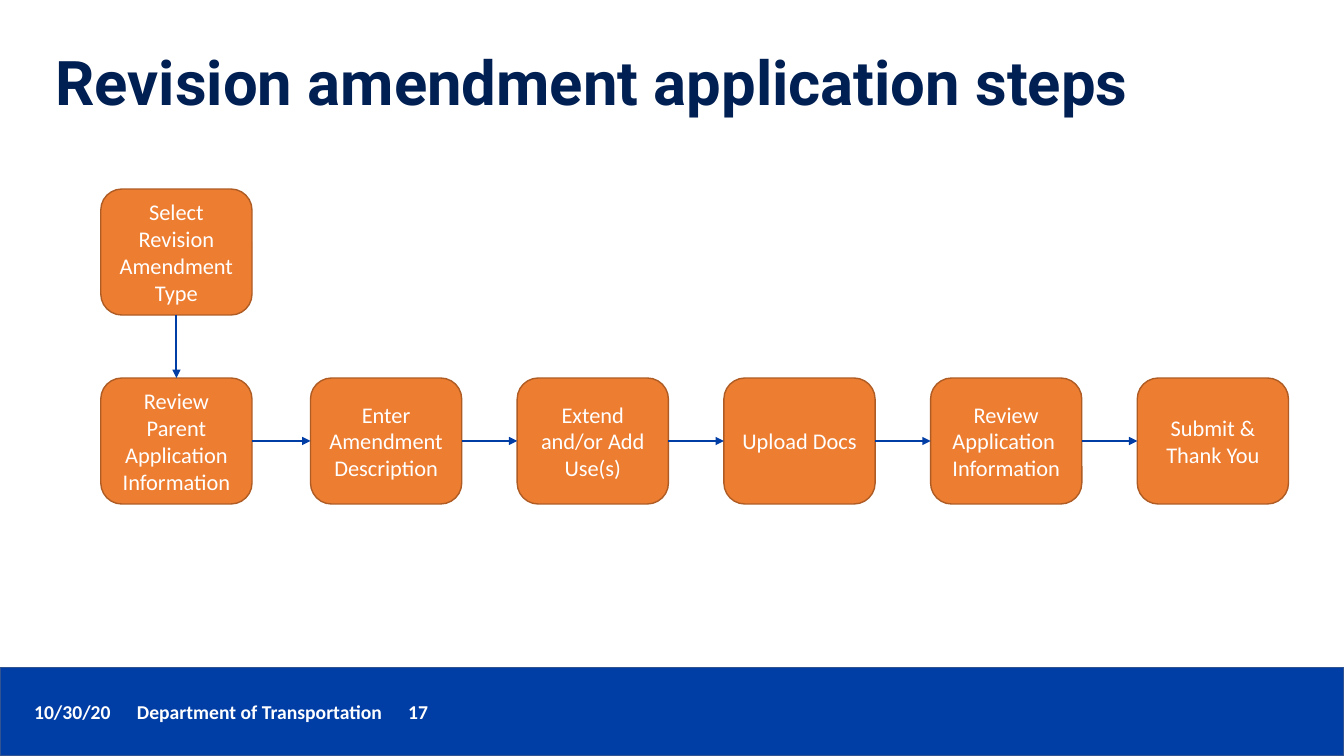
from dataclasses import dataclass

from lxml.etree import SubElement
from pptx import Presentation
from pptx.dml.color import RGBColor
from pptx.enum.shapes import MSO_CONNECTOR, MSO_SHAPE
from pptx.enum.text import MSO_ANCHOR, MSO_AUTO_SIZE, PP_ALIGN
from pptx.oxml.ns import qn
from pptx.util import Inches, Pt

W, H = 13.33, 7.5
ROW_H = H / 4
STEP_W, STEP_H = 1.5, H / 6
FIRST_LEFT, NEXT_LEFT, COL_W = 1, 3.08, 2.05
BAR_TOP = 6.62
TOP, LEFT, BOTTOM, RIGHT = range(4)

TITLE_FONT = {"name": "Roboto", "size": Pt(44), "bold": True}
STEP_FONT = {"name": "Calibri", "size": Pt(16), "bold": False}
FOOTER_FONT = {"name": "Calibri", "size": Pt(14), "bold": True}


@dataclass
class Step:
    text: str
    col: int
    row: int = 1

    @property
    def left(self) -> float:
        return NEXT_LEFT + COL_W * (self.col - 1) if self.col else FIRST_LEFT

    @property
    def top(self) -> float:
        return ROW_H * (self.row + 1)


STEPS = [
    Step("Select Revision Amendment Type", 0, 0),
    Step("Review Parent Application Information", 0),
    Step("Enter Amendment Description", 1),
    Step("Extend and/or Add Use(s)", 2),
    Step("Upload Docs", 3),
    Step("Review Application \nInformation", 4),
    Step("Submit & Thank You", 5),
]


def rgb(value: str) -> RGBColor:
    return RGBColor.from_string(value)


def box(*lengths: float) -> list:
    return [Inches(v) for v in lengths]


def write(tf, text: str, fmt: dict, color: str, align: PP_ALIGN) -> None:
    tf.text = text
    tf.word_wrap = True
    for p in tf.paragraphs:
        p.alignment = align
        for r in p.runs:
            for key, value in fmt.items():
                setattr(r.font, key, value)
            r.font.color.rgb = rgb(color)


def add_block(s, kind: MSO_SHAPE, place: list, fill: str, line: str):
    sp = s.shapes.add_shape(kind, *place)
    sp.shadow.inherit = False
    sp.fill.solid()
    sp.fill.fore_color.rgb = rgb(fill)
    sp.line.color.rgb = rgb(line)
    sp.line.width = Pt(1)
    return sp


def add_step(s, step: Step):
    place = box(step.left, step.top, STEP_W, STEP_H)
    sp = add_block(s, MSO_SHAPE.ROUNDED_RECTANGLE, place, "ED7D31", "AF5C24")
    sp.text_frame.vertical_anchor = MSO_ANCHOR.MIDDLE
    write(sp.text_frame, step.text, STEP_FONT, "FFFFFF", PP_ALIGN.CENTER)
    return sp


def add_arrow(s, start, end, down: bool) -> None:
    cx = s.shapes.add_connector(MSO_CONNECTOR.STRAIGHT, 0, 0, 0, 0)
    cx.begin_connect(start, BOTTOM if down else RIGHT)
    cx.end_connect(end, TOP if down else LEFT)
    cx.line.color.rgb = rgb("003DA5")
    cx.line.width = Pt(1.5)
    SubElement(cx.line._get_or_add_ln(), qn("a:tailEnd"), type="triangle")
    SubElement(cx._element.spPr, qn("a:effectLst"))


def add_footer(s) -> None:
    add_block(s, MSO_SHAPE.RECTANGLE, box(0, BAR_TOP, W, H - BAR_TOP), "003DA5", "31538F")
    tf = s.shapes.add_textbox(*box(0.24, 6.89, 10.06, 0.34)).text_frame
    write(tf, "10/30/20\tDepartment of Transportation\t17", FOOTER_FONT, "FFFFFF", PP_ALIGN.LEFT)
    tabs = SubElement(tf.paragraphs[0]._p.get_or_add_pPr(), qn("a:tabLst"))
    for pos in (1.02, 3.71):
        SubElement(tabs, qn("a:tab"), pos=str(Inches(pos)), algn="l")


def add_title(s) -> None:
    sp = s.shapes.title
    sp.left, sp.top, sp.width, sp.height = box(0.45, 0.12, 11.76, 1.45)
    tf = sp.text_frame
    tf.auto_size = MSO_AUTO_SIZE.NONE
    tf.vertical_anchor = MSO_ANCHOR.MIDDLE
    write(tf, "Revision amendment application steps", TITLE_FONT, "001F52", PP_ALIGN.LEFT)
    tf.paragraphs[0].line_spacing = 0.9


def main() -> None:
    prs = Presentation()
    prs.slide_width, prs.slide_height = box(W, H)
    s = prs.slides.add_slide(prs.slide_layouts[5])
    add_footer(s)
    add_title(s)
    shapes = [add_step(s, step) for step in STEPS]
    for i in range(len(STEPS) - 1):
        add_arrow(s, shapes[i], shapes[i + 1], STEPS[i].row != STEPS[i + 1].row)
    prs.save("out.pptx")


if __name__ == "__main__":
    main()
